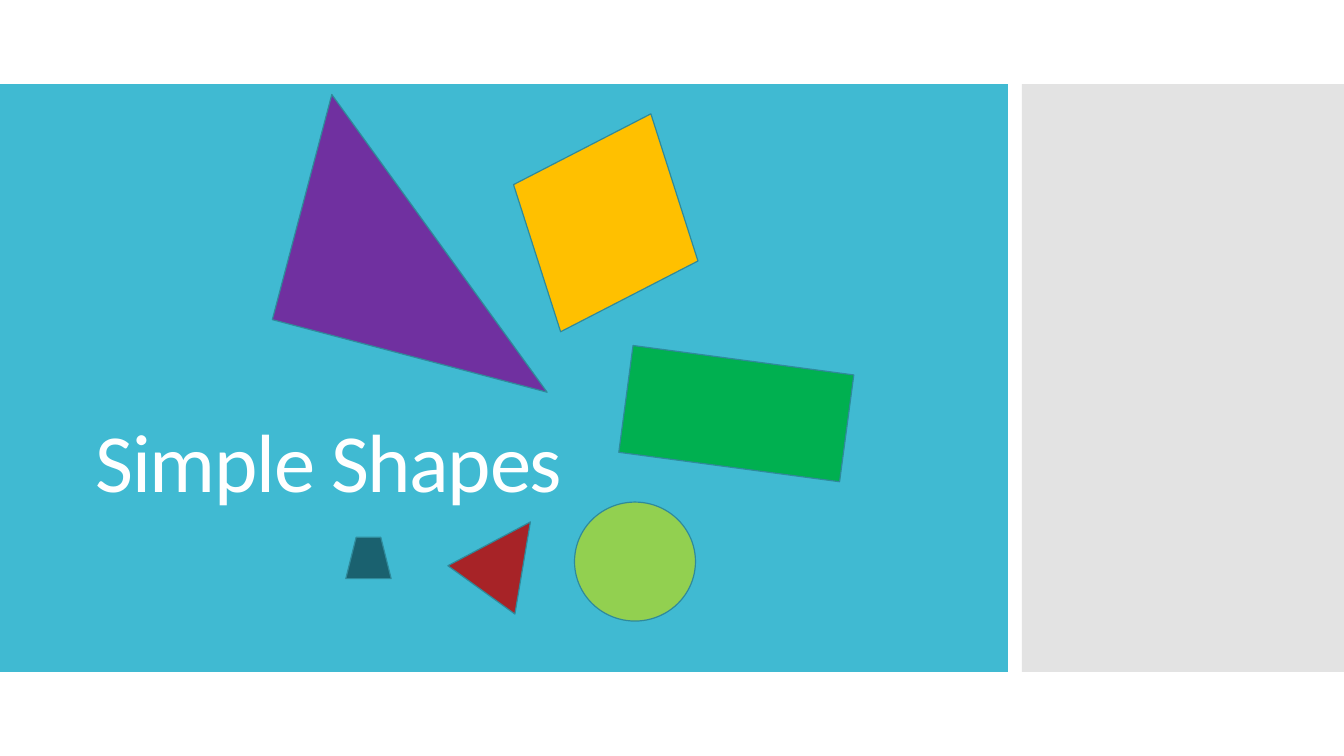
from pptx import Presentation
from pptx.dml.color import RGBColor
from pptx.enum.shapes import MSO_SHAPE
from pptx.enum.text import MSO_ANCHOR, MSO_AUTO_SIZE, PP_ALIGN
from pptx.oxml.ns import qn
from pptx.util import Pt
from lxml.etree import SubElement

TEAL = RGBColor(0x40, 0xBA, 0xD2)
GREY = RGBColor(0xC8, 0xC8, 0xC8)
WHITE = RGBColor(0xFF, 0xFF, 0xFF)
OUTLINE = RGBColor(0x2F, 0x8A, 0x9B)
RED = RGBColor(0xA7, 0x23, 0x27)
LIME = RGBColor(0x92, 0xD0, 0x50)
GREEN = RGBColor(0x00, 0xB0, 0x50)
AMBER = RGBColor(0xFF, 0xC0, 0x00)
PURPLE = RGBColor(0x70, 0x30, 0xA0)
DARK_TEAL = RGBColor(0x1A, 0x61, 0x6F)

# Kind, left, top (within the main panel), width, height, rotation, fill
FIGURES = [
    (MSO_SHAPE.ISOSCELES_TRIANGLE, 331.9, 307.2, 59, 59.8, 35.8, RED),
    (MSO_SHAPE.OVAL, 410.4, 298.6, 86.4, 85, 0, LIME),
    (MSO_SHAPE.RECTANGLE, 446.4, 197, 159.1, 77, 7.6, GREEN),
    (MSO_SHAPE.DIAMOND, 361.4, 14.9, 142.6, 168.5, 22.5, AMBER),
    (MSO_SHAPE.RIGHT_TRIANGLE, 212.4, 30.7, 203, 166.3, 14.8, PURPLE),
    (MSO_SHAPE.TRAPEZOID, 247, 323.8, 32.4, 29.5, 0, DARK_TEAL),
]


def add_filled(slide, kind, left, top, width, height, fill):
    sp = slide.shapes.add_shape(kind, Pt(left), Pt(top), Pt(width), Pt(height))
    sp.shadow.inherit = False
    sp.fill.solid()
    sp.fill.fore_color.rgb = fill
    sp.line.fill.background()
    return sp


def add_side_panel(slide, left, top, width, height):
    sp = add_filled(slide, MSO_SHAPE.RECTANGLE, left, top, width, height, GREY)
    # Half transparent
    color = sp.fill._xPr.find(qn("a:solidFill"))[0]
    SubElement(color, qn("a:alpha")).set("val", "50000")


def add_title(slide, left, top, width, height):
    title = slide.shapes.title
    title.left, title.top = Pt(left), Pt(top)
    title.width, title.height = Pt(width), Pt(height)
    tf = title.text_frame
    tf.text = "Simple Shapes"
    tf.word_wrap = True
    tf.auto_size = MSO_AUTO_SIZE.NONE
    tf.vertical_anchor = MSO_ANCHOR.BOTTOM
    p = tf.paragraphs[0]
    p.alignment = PP_ALIGN.LEFT
    p.line_spacing = 0.9
    p.font.name = "Calibri"
    p.font.size = Pt(59)
    p.font.color.rgb = WHITE
    # Tighter letter spacing
    p.runs[0]._r.get_or_add_rPr().set("spc", "-100")
    # Bring the title in front of the panels
    slide.shapes._spTree.append(title._element)


def add_figures(slide, left, top):
    for kind, x, y, width, height, rotation, fill in FIGURES:
        sp = add_filled(slide, kind, left + x, top + y, width, height, fill)
        sp.rotation = rotation
        sp.line.color.rgb = OUTLINE
        sp.line.width = Pt(0.85)


def add_main_panel(slide, left, top, width, height):
    add_filled(slide, MSO_SHAPE.RECTANGLE, left, top, width, height, TEAL)
    add_title(slide, left + 61.2, top + 51.6, 576, 256.3)
    add_figures(slide, left, top)


def main():
    prs = Presentation()
    prs.slide_width, prs.slide_height = Pt(960), Pt(540)
    slide = prs.slides.add_slide(prs.slide_layouts[5])
    add_side_panel(slide, 730, 60, 230, 420)
    add_main_panel(slide, 0, 60, 720, 420)
    prs.save("out.pptx")


if __name__ == "__main__":
    main()
